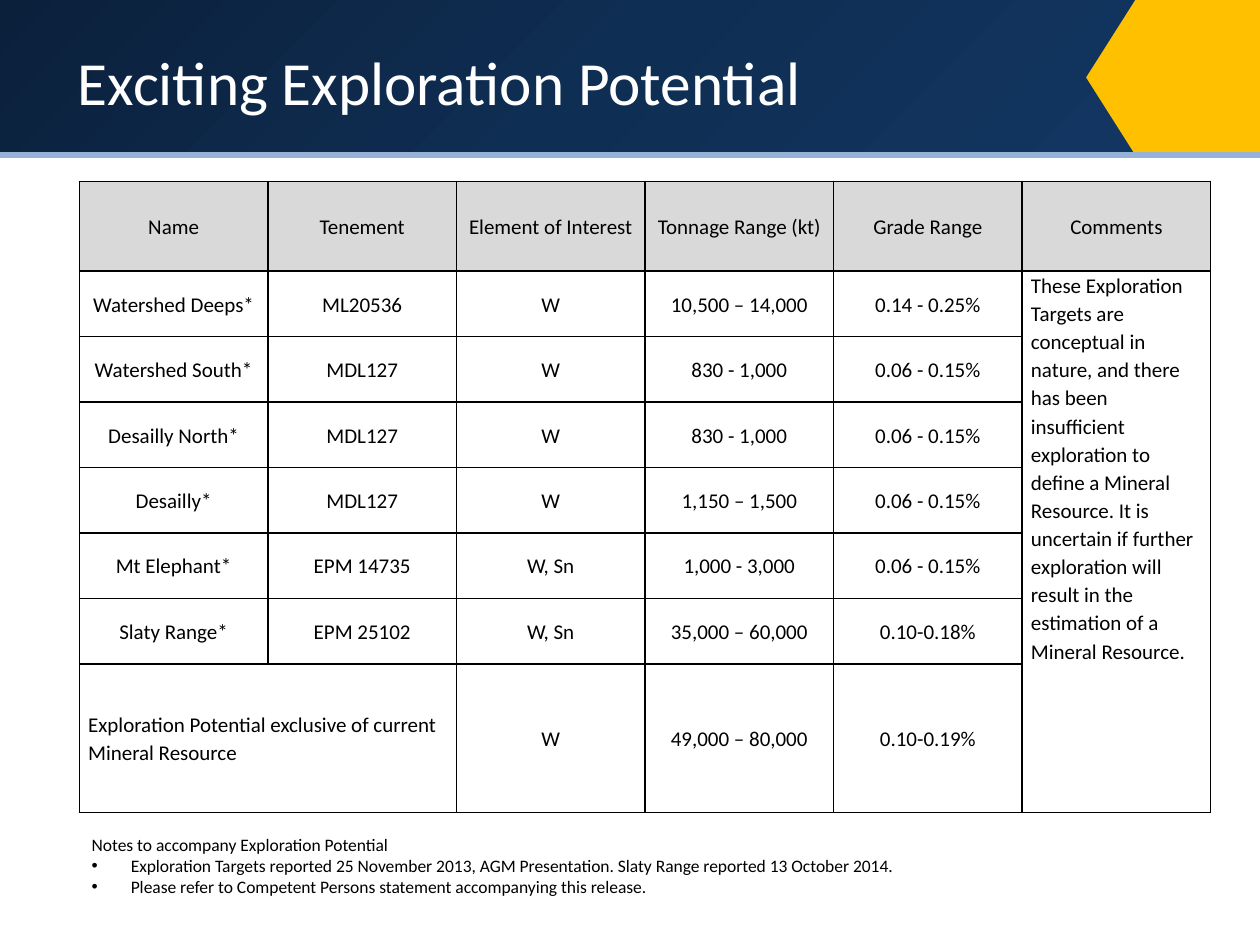
"""Build the exploration potential slide with its banner, table and notes."""
from copy import deepcopy

from lxml.etree import SubElement
from pptx import Presentation
from pptx.dml.color import RGBColor
from pptx.enum.shapes import MSO_CONNECTOR as Connector, MSO_SHAPE as Shape
from pptx.enum.text import MSO_ANCHOR as Anchor, MSO_AUTO_SIZE as AutoSize, PP_ALIGN as Align
from pptx.oxml.ns import qn
from pptx.util import Inches, Pt

HEADERS = ["Name", "Tenement", "Element of Interest", "Tonnage Range (kt)", "Grade Range", "Comments"]
TARGETS = [
    ["Watershed Deeps*", "ML20536", "W", "10,500 – 14,000", "0.14 - 0.25%"],
    ["Watershed South*", "MDL127", "W", "830 - 1,000", "0.06 - 0.15%"],
    ["Desailly North*", "MDL127", "W", "830 - 1,000", "0.06 - 0.15%"],
    ["Desailly*", "MDL127", "W", "1,150 – 1,500", "0.06 - 0.15%"],
    ["Mt Elephant*", "EPM 14735", "W, Sn", "1,000 - 3,000", "0.06 - 0.15%"],
    ["Slaty Range*", "EPM 25102", "W, Sn", "35,000 – 60,000", "0.10-0.18%"],
]
TOTAL = ["Exploration Potential exclusive of current Mineral Resource", "",
         "W", "49,000 – 80,000", "0.10-0.19%"]
COMMENT = (
    "These Exploration Targets are conceptual in nature, and there has been insufficient "
    "exploration to define a Mineral Resource. It is uncertain if further exploration will "
    "result in the estimation of a Mineral Resource."
)
NOTES_HEADING = "Notes to accompany Exploration Potential"
NOTES = [
    "Exploration Targets reported 25 November 2013, AGM Presentation. Slaty Range reported 13 October 2014.",
    "Please refer to Competent Persons statement accompanying this release.",
]


def color(value):
    return RGBColor.from_string(value)


def write(paragraph, text, size=12, ink="000000", align=Align.LEFT, spacing=1.0, bullet=False):
    if bullet:
        properties = paragraph._p.get_or_add_pPr()
        properties.set("marL", str(Inches(0.31)))
        properties.set("indent", str(-Inches(0.31)))
        SubElement(properties, qn("a:buFont"), typeface="Arial")
        SubElement(properties, qn("a:buChar"), char="•")
    paragraph.alignment = align
    paragraph.line_spacing = spacing
    run = paragraph.add_run()
    run.text = text
    run.font.name = "Calibri"
    run.font.size = Pt(size)
    run.font.color.rgb = color(ink)


class SlideBuilder:
    navy = ["0B203B", "0F2E53", "123663"]
    gold = "FFC000"
    rule = "95B3D7"
    header = "D9D9D9"
    border = "000000"

    def __init__(self, slide):
        self.slide = slide

    def shape(self, kind, left, top, width, height, fill=None, rotation=0):
        shape = self.slide.shapes.add_shape(
            kind, Inches(left), Inches(top), Inches(width), Inches(height))
        shape.shadow.inherit = False
        shape.line.fill.background()
        shape.rotation = rotation
        if fill:
            shape.fill.solid()
            shape.fill.fore_color.rgb = color(fill)
        return shape

    def gradient(self, left, top, width, height):
        shape = self.shape(Shape.RECTANGLE, left, top, width, height)
        shape.fill.gradient()
        shape.fill.gradient_angle = 315
        first = shape._element.xpath(".//a:gs")[0]
        first.addnext(deepcopy(first))
        for index, stop in enumerate(shape.fill.gradient_stops):
            stop.position = index / 2
            stop.color.rgb = color(self.navy[index])

    def line(self, left, top, right, bottom):
        line = self.slide.shapes.add_connector(
            Connector.STRAIGHT, Inches(left), Inches(top), Inches(right), Inches(bottom))
        line.line.color.rgb = color(self.rule)
        line.line.width = Pt(3)
        SubElement(line._element.spPr, qn("a:effectLst"))

    def text_box(self, left, top, width, height, anchor=Anchor.TOP):
        box = self.slide.shapes.add_textbox(
            Inches(left), Inches(top), Inches(width), Inches(height))
        frame = box.text_frame
        frame.word_wrap = True
        frame.vertical_anchor = anchor
        return frame

    def cell(self, cell, text, fill=None, align=Align.CENTER, anchor=Anchor.MIDDLE):
        cell.margin_left = cell.margin_right = Inches(0.07)
        cell.margin_top = cell.margin_bottom = 0
        cell.vertical_anchor = anchor
        properties = cell._tc.get_or_add_tcPr()
        for side in ("lnL", "lnR", "lnT", "lnB"):
            edge = SubElement(properties, qn(f"a:{side}"), w=str(Pt(1)))
            SubElement(SubElement(edge, qn("a:solidFill")), qn("a:srgbClr"), val=self.border)
        if fill:
            cell.fill.solid()
            cell.fill.fore_color.rgb = color(fill)
        else:
            cell.fill.background()
        if text:
            write(cell.text_frame.paragraphs[0], text, align=align, spacing=1.1)

    def table(self, left, top, width, heights):
        columns = len(HEADERS)
        last = len(heights) - 1
        table = self.slide.shapes.add_table(
            len(heights), columns, Inches(left), Inches(top),
            Inches(width), Inches(sum(heights))).table
        table.first_row = table.horz_banding = False
        for row, height in zip(table.rows, heights):
            row.height = Inches(height)
        for column, text in enumerate(HEADERS):
            self.cell(table.cell(0, column), text, fill=self.header)
        for row, values in enumerate([*TARGETS, TOTAL], start=1):
            for column, text in enumerate(values):
                left_aligned = row == last and column == 0
                self.cell(table.cell(row, column), text,
                          align=Align.LEFT if left_aligned else Align.CENTER)
            self.cell(table.cell(row, columns - 1), COMMENT if row == 1 else "",
                      align=Align.LEFT, anchor=Anchor.TOP)
        table.cell(1, columns - 1).merge(table.cell(last, columns - 1))
        table.cell(last, 0).merge(table.cell(last, 1))


def main():
    presentation = Presentation()
    presentation.slide_width = Inches(10)
    presentation.slide_height = Inches(7.5)
    builder = SlideBuilder(presentation.slides.add_slide(presentation.slide_layouts[6]))

    builder.gradient(0, 0, 9.51, 1.23)
    builder.shape(Shape.RECTANGLE, 9.01, 0, 0.99, 1.23, builder.gold)
    builder.shape(Shape.ISOSCELES_TRIANGLE, 8.2, 0.42, 1.23, 0.39, builder.gold, rotation=270)
    builder.line(0, 1.23, 10, 1.23)

    title = builder.text_box(0.52, 0.17, 7.92, 0.94, Anchor.MIDDLE)
    write(title.paragraphs[0], "Exciting Exploration Potential", size=35, ink="FFFFFF")

    notes = builder.text_box(0.63, 6.57, 7, 0.61)
    notes.auto_size = AutoSize.SHAPE_TO_FIT_TEXT
    write(notes.paragraphs[0], NOTES_HEADING, size=10)
    for note in NOTES:
        write(notes.add_paragraph(), note, size=10, bullet=True)

    builder.table(0.63, 1.44, 8.98, [0.71] + [0.52] * len(TARGETS) + [1.18])
    presentation.save("out.pptx")


if __name__ == "__main__":
    main()
